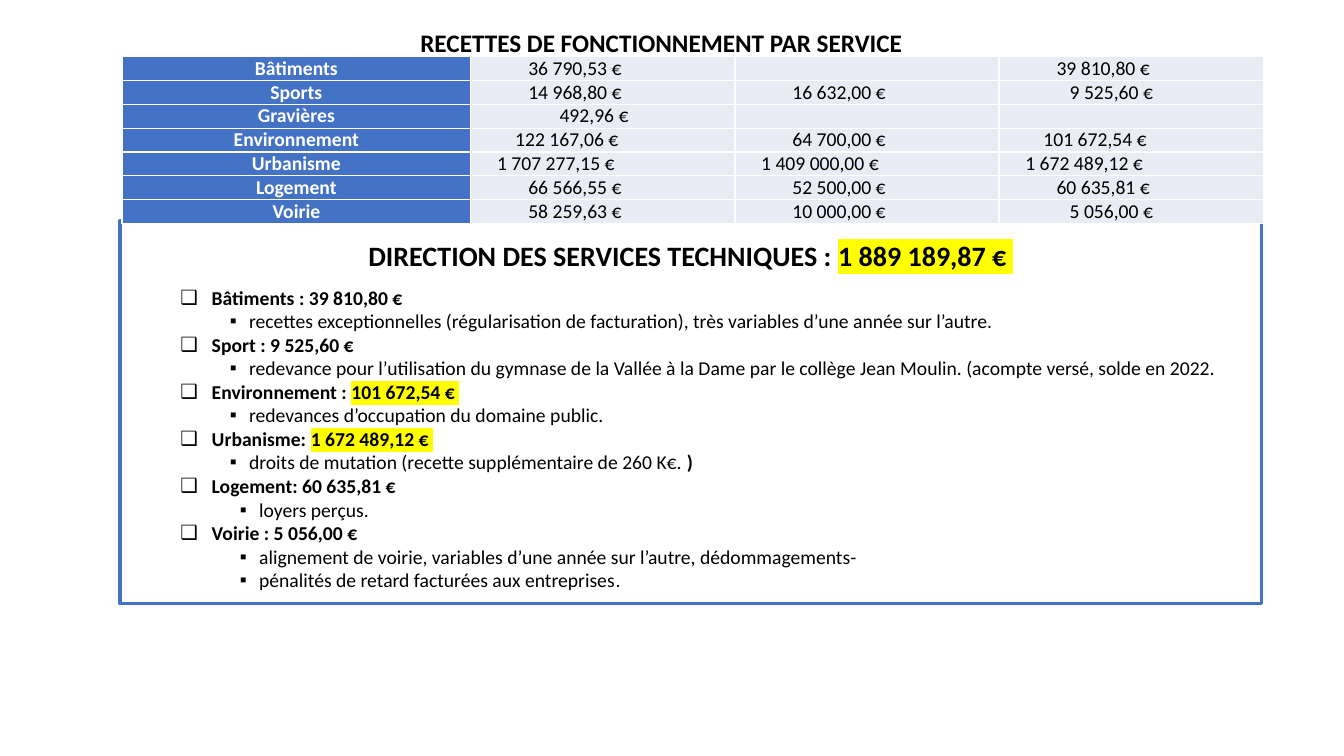
from dataclasses import dataclass
from typing import Any

from lxml.etree import SubElement, Element
from pptx import Presentation
from pptx.dml.color import RGBColor
from pptx.enum.text import MSO_ANCHOR as Anchor, MSO_AUTO_SIZE as AutoSize, PP_ALIGN as Align
from pptx.oxml.ns import qn
from pptx.util import Pt

PX = 9144
BLUE, PALE, WHITE, BLACK, YELLOW = "4472C4", "E9EBF5", "FFFFFF", "000000", "FFFF00"


@dataclass(frozen=True)
class Span:
    text: str
    bold: bool = False
    size: int = 14
    hex_color: str = BLACK
    highlight: str = ""
    font: str = "Calibri"


@dataclass(frozen=True)
class Bullet:
    char: str
    margin: int
    hanging: int


@dataclass(frozen=True)
class Entry:
    bullet: Bullet
    spans: tuple[Span, ...]


SERVICE = Bullet("❑", 81, 31)
DETAIL = Bullet("▪", 118, 19)
DEEP_DETAIL = Bullet("▪", 128, 19)


def service(label: str, amount: str = "") -> Entry:
    marked = (Span(amount, True, highlight=YELLOW),) if amount else ()
    return Entry(SERVICE, (Span(label, True), *marked))


def detail(text: str, *more: Span, bullet: Bullet = DETAIL) -> Entry:
    return Entry(bullet, (Span(text), *more))


ENTRIES = [
    service("Bâtiments : 39 810,80 €"),
    detail("recettes exceptionnelles (régularisation de facturation), très variables d’une année sur l’autre."),
    service("Sport : 9 525,60 €"),
    detail("redevance pour l’utilisation du gymnase de la Vallée à la Dame par le collège Jean Moulin. "
           "(acompte versé, solde en 2022."),
    service("Environnement : ", "101 672,54 € "),
    detail("redevances d’occupation du domaine public."),
    service("Urbanisme: ", "1 672 489,12 € "),
    detail("droits de mutation (recette supplémentaire de 260 K€. ", Span(")", True)),
    service("Logement: 60 635,81 €"),
    detail("loyers perçus.", bullet=DEEP_DETAIL),
    service("Voirie : 5 056,00 €"),
    detail("alignement de voirie, variables d’une année sur l’autre, dédommagements-", bullet=DEEP_DETAIL),
    detail("pénalités de retard facturées aux entreprises", Span(".", font="Arial"), bullet=DEEP_DETAIL),
]

REVENUES = [
    ("Bâtiments", "36 790,53 €", "", "39 810,80 €"),
    ("Sports", "14 968,80 €", "16 632,00 €", "9 525,60 €"),
    ("Gravières", "492,96 €", "", ""),
    ("Environnement", "122 167,06 €", "64 700,00 €", "101 672,54 €"),
    ("Urbanisme", "1 707 277,15 €", "1 409 000,00 €", "1 672 489,12 €"),
    ("Logement", "66 566,55 €", "52 500,00 €", "60 635,81 €"),
    ("Voirie", "58 259,63 €", "10 000,00 €", "5 056,00 €"),
]
AMOUNT_INDENTS = {0: 0, 8: 88, 10: 70, 11: 57, 12: 44, 14: 26}
COLUMN_WIDTHS = (346, 262, 262, 262)
ROW_HEIGHT = 23


def color(hex_color: str) -> RGBColor:
    return RGBColor.from_string(hex_color)


def apply(target: Any, values: dict[str, Any]) -> None:
    for name, value in values.items():
        setattr(target, name, value)


def place(part: Any, left: int, top: int, width: int, height: int) -> None:
    apply(part, {"left": left * PX, "top": top * PX, "width": width * PX, "height": height * PX})


def paint(part: Any, hex_color: str) -> None:
    part.fill.solid()
    part.fill.fore_color.rgb = color(hex_color)


def write(paragraph: Any, *spans: Span) -> None:
    for span in spans:
        run = paragraph.add_run()
        run.text = span.text
        apply(run.font, {"size": Pt(span.size), "bold": span.bold, "name": span.font})
        run.font.color.rgb = color(span.hex_color)
        if span.highlight:
            highlight = Element(qn("a:highlight"))
            SubElement(highlight, qn("a:srgbClr"), val=span.highlight)
            run.font._element.find(qn("a:solidFill")).addnext(highlight)


def set_bullet(paragraph: Any, bullet: Bullet | None) -> None:
    properties = paragraph._p.get_or_add_pPr()
    properties.set("marL", str(bullet.margin * PX if bullet else 0))
    properties.set("indent", str(-bullet.hanging * PX if bullet else 0))
    if bullet:
        SubElement(properties, qn("a:buChar"), char=bullet.char)
    else:
        SubElement(properties, qn("a:buNone"))


def add_heading(slide: Any) -> None:
    heading = slide.shapes.title
    place(heading, 81, 22, 1150, 40)
    apply(heading.text_frame, {"word_wrap": True, "auto_size": AutoSize.NONE, "vertical_anchor": Anchor.TOP})
    paragraph = heading.text_frame.paragraphs[0]
    paragraph.alignment = Align.CENTER
    write(paragraph, Span("RECETTES DE FONCTIONNEMENT PAR SERVICE", True, 18))


def add_breakdown(slide: Any) -> None:
    breakdown = slide.placeholders[1]
    place(breakdown, 119, 219, 1132, 380)
    paint(breakdown, WHITE)
    breakdown.line.color.rgb = color(BLUE)
    breakdown.line.width = Pt(2.25)
    frame = breakdown.text_frame
    apply(frame, {"word_wrap": True, "auto_size": AutoSize.NONE, "vertical_anchor": Anchor.MIDDLE})
    total = frame.paragraphs[0]
    apply(total, {"alignment": Align.CENTER, "line_spacing": 1.15,
                  "space_before": Pt(0), "space_after": Pt(10)})
    set_bullet(total, None)
    write(total, Span("DIRECTION DES SERVICES TECHNIQUES : ", True, 20),
          Span("1 889 189,87 € ", True, 20, highlight=YELLOW))
    for entry in ENTRIES:
        line = frame.add_paragraph()
        apply(line, {"level": 1, "alignment": Align.JUSTIFY, "line_spacing": 1.0,
                     "space_before": Pt(0), "space_after": Pt(0)})
        set_bullet(line, entry.bullet)
        write(line, *entry.spans)


def fill_cell(cell: Any, text: str, is_service: bool) -> None:
    indent = 0 if is_service else AMOUNT_INDENTS[len(text)]
    apply(cell, {"margin_left": indent * PX, "margin_right": 0, "margin_top": 0,
                 "margin_bottom": 0, "vertical_anchor": Anchor.BOTTOM})
    paint(cell, BLUE if is_service else PALE)
    paragraph = cell.text_frame.paragraphs[0]
    paragraph.alignment = Align.CENTER if is_service else Align.LEFT
    if text:
        write(paragraph, Span(text, is_service, hex_color=WHITE if is_service else BLACK))
    else:
        SubElement(paragraph._p, qn("a:endParaRPr"), sz="1400")


def add_revenues(slide: Any) -> None:
    frame = slide.shapes.add_table(len(REVENUES), len(COLUMN_WIDTHS), 121 * PX, 56 * PX,
                                   sum(COLUMN_WIDTHS) * PX, len(REVENUES) * ROW_HEIGHT * PX)
    revenues = frame.table
    apply(revenues, {"first_row": False, "horz_banding": False})
    for column, width in zip(revenues.columns, COLUMN_WIDTHS):
        column.width = width * PX
    for row, texts in zip(revenues.rows, REVENUES):
        row.height = ROW_HEIGHT * PX
        for index, (cell, text) in enumerate(zip(row.cells, texts)):
            fill_cell(cell, text, index == 0)


def main() -> None:
    deck = Presentation()
    apply(deck, {"slide_width": 1333 * PX, "slide_height": 750 * PX})
    slide = deck.slides.add_slide(deck.slide_layouts[1])
    add_heading(slide)
    add_breakdown(slide)
    add_revenues(slide)
    deck.save("out.pptx")


if __name__ == "__main__":
    main()
